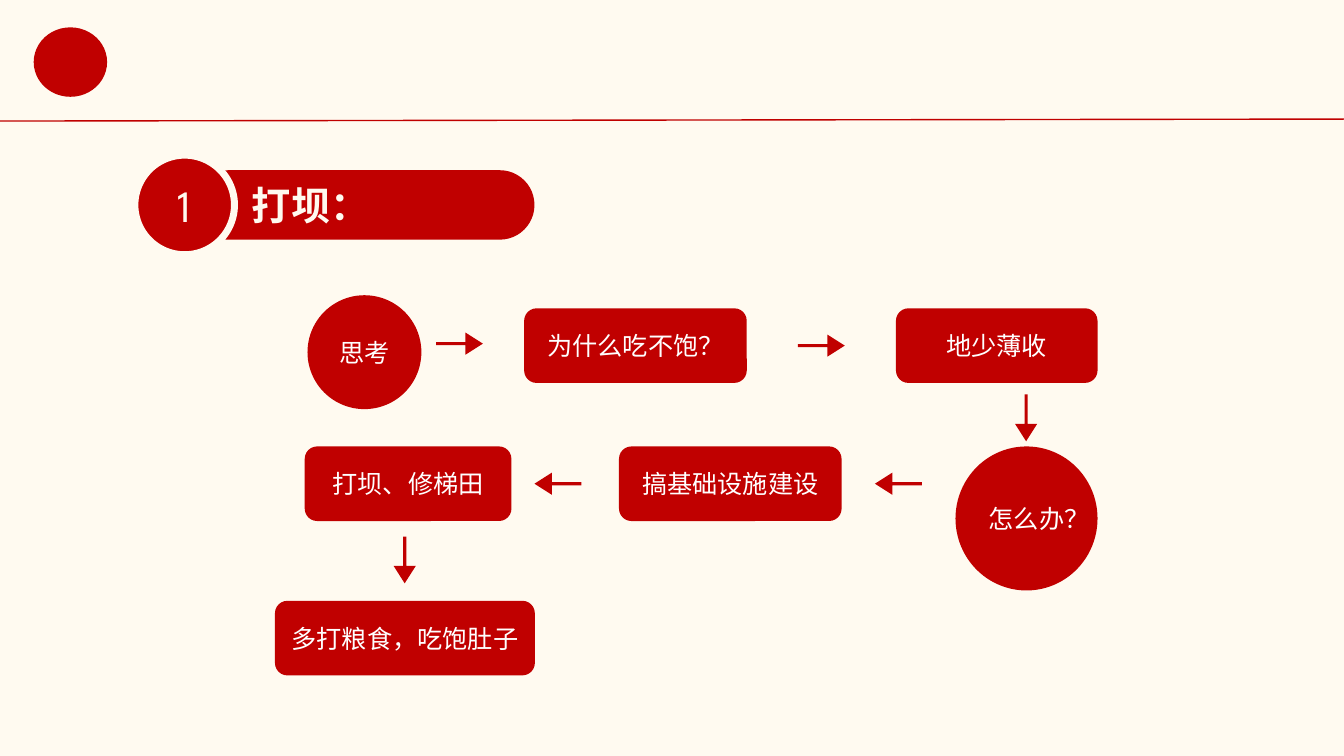
"""Build the slide that explains the dam-building reasoning as a flow of steps."""
import dataclasses

import lxml.etree
import pptx
import pptx.dml.color
import pptx.enum.shapes
import pptx.enum.text
import pptx.oxml.ns
import pptx.util

Cm = pptx.util.Cm
Shapes = pptx.enum.shapes.MSO_SHAPE


@dataclasses.dataclass(frozen=True)
class Theme:
    red: str = "C00000"
    cream: str = "FFFAF0"
    white: str = "FFFFFF"
    text_font: str = "Noto Sans CJK SC"
    number_font: str = "League Spartan"
    step_size: int = 18
    title_size: int = 28
    number_size: int = 32
    rule_width: int = 1
    badge_outline: int = 5


THEME = Theme()
STEP_HEIGHT = 1.88
FIRST_ROW, SECOND_ROW, THIRD_ROW = 7.77, 11.25, 15.14
STEPS = [
    ("思考", Shapes.OVAL, 7.75, 7.44, 2.87, 2.87),
    ("为什么吃不饱？", Shapes.ROUNDED_RECTANGLE, 13.21, FIRST_ROW, 5.61, STEP_HEIGHT),
    ("地少薄收", Shapes.ROUNDED_RECTANGLE, 22.58, FIRST_ROW, 5.08, STEP_HEIGHT),
    ("怎么办？", Shapes.OVAL, 24.08, SECOND_ROW, 3.58, 3.63),
    ("搞基础设施建设", Shapes.ROUNDED_RECTANGLE, 15.6, SECOND_ROW, 5.61, STEP_HEIGHT),
    ("打坝、修梯田", Shapes.ROUNDED_RECTANGLE, 7.68, SECOND_ROW, 5.21, STEP_HEIGHT),
    ("多打粮食，吃饱肚子", Shapes.ROUNDED_RECTANGLE, 6.93, THIRD_ROW, 6.55, STEP_HEIGHT),
]
RIGHT, LEFT, DOWN = (1, 0), (-1, 0), (0, 1)
ARROWS = [
    (11.58, 8.66, RIGHT),
    (20.7, 8.71, RIGHT),
    (25.86, 10.53, DOWN),
    (22.64, 12.19, LEFT),
    (14.06, 12.19, LEFT),
    (10.2, 14.11, DOWN),
]
ARROW_OUTLINE = [
    (0.59, 0), (0.15, 0.28), (0.15, 0.04), (-0.59, 0.04),
    (-0.59, -0.04), (0.15, -0.04), (0.15, -0.28),
]


def rgb(value):
    """Return the colour object for a hex value."""
    return pptx.dml.color.RGBColor.from_string(value)


def paint(shape):
    """Give a shape the flat red look without outline or shadow."""
    shape.shadow.inherit = False
    shape.fill.solid()
    shape.fill.fore_color.rgb = rgb(THEME.red)
    shape.line.fill.background()


def add_block(slide, kind, left, top, width, height):
    """Add a red preset shape measured in centimetres."""
    shape = slide.shapes.add_shape(kind, Cm(left), Cm(top), Cm(width), Cm(height))
    paint(shape)
    return shape


def write(shape, text, size, color, font_name, bold=False):
    """Write one styled paragraph into a shape and return it."""
    paragraph = shape.text_frame.paragraphs[0]
    paragraph.text = text
    font = paragraph.font
    font.size = pptx.util.Pt(size)
    font.bold = bold
    font.color.rgb = rgb(color)
    font.name = font_name
    qn = pptx.oxml.ns.qn
    properties = paragraph._p.find(qn("a:pPr")).find(qn("a:defRPr"))
    lxml.etree.SubElement(properties, qn("a:ea"), typeface=font_name)
    return paragraph


def write_centred(shape, text, size, color, font_name):
    """Write one paragraph in the middle of a shape."""
    shape.text_frame.word_wrap = True
    shape.text_frame.vertical_anchor = pptx.enum.text.MSO_ANCHOR.MIDDLE
    paragraph = write(shape, text, size, color, font_name)
    paragraph.alignment = pptx.enum.text.PP_ALIGN.CENTER


def add_header(slide, slide_width):
    """Add the plain mark and the rule across the top."""
    add_block(slide, Shapes.OVAL, 0.85, 0.69, 1.85, 1.75)
    rule = slide.shapes.add_connector(
        pptx.enum.shapes.MSO_CONNECTOR.STRAIGHT, 0, Cm(3.05), slide_width, Cm(3)
    )
    rule.line.color.rgb = rgb(THEME.red)
    rule.line.width = pptx.util.Pt(THEME.rule_width)
    lxml.etree.SubElement(rule._element.spPr, pptx.oxml.ns.qn("a:effectLst"))


def add_heading(slide, number, title):
    """Add the pill-shaped heading with its numbered badge."""
    pill = add_block(slide, Shapes.ROUNDED_RECTANGLE, 4.88, 4.29, 8.59, 1.75)
    badge = add_block(slide, Shapes.ROUNDED_RECTANGLE, 3.4, 3.91, 2.51, 2.51)
    for shape in (pill, badge):
        shape.adjustments[0] = 0.5
    badge.line.color.rgb = rgb(THEME.cream)
    badge.line.width = pptx.util.Pt(THEME.badge_outline)
    write_centred(badge, number, THEME.number_size, THEME.cream, THEME.number_font)
    label = slide.shapes.add_textbox(Cm(6.1), Cm(4.45), Cm(3.48), Cm(1.45))
    label.text_frame.word_wrap = False
    label.text_frame.auto_size = pptx.enum.text.MSO_AUTO_SIZE.SHAPE_TO_FIT_TEXT
    write(label, title, THEME.title_size, THEME.cream, THEME.text_font, bold=True)


def add_step(slide, text, kind, left, top, width, height):
    """Add one step of the flow."""
    step = add_block(slide, kind, left, top, width, height)
    write_centred(step, text, THEME.step_size, THEME.white, THEME.text_font)


def add_arrow(slide, center_x, center_y, direction):
    """Add a block arrow centred on a point and turned to a direction."""
    across, down = direction
    points = [
        (Cm(center_x + x * across - y * down), Cm(center_y + x * down + y * across))
        for x, y in ARROW_OUTLINE
    ]
    builder = slide.shapes.build_freeform(*points[0])
    builder.add_line_segments(points[1:], close=True)
    paint(builder.convert_to_shape())


def main():
    """Build and save the presentation."""
    presentation = pptx.Presentation()
    presentation.slide_width = Cm(33.87)
    presentation.slide_height = Cm(19.05)
    slide = presentation.slides.add_slide(presentation.slide_layouts[6])
    slide.background.fill.solid()
    slide.background.fill.fore_color.rgb = rgb(THEME.cream)
    add_header(slide, presentation.slide_width)
    add_heading(slide, "1", "打坝：")
    for step in STEPS:
        add_step(slide, *step)
    for arrow in ARROWS:
        add_arrow(slide, *arrow)
    presentation.save("out.pptx")


if __name__ == "__main__":
    main()
